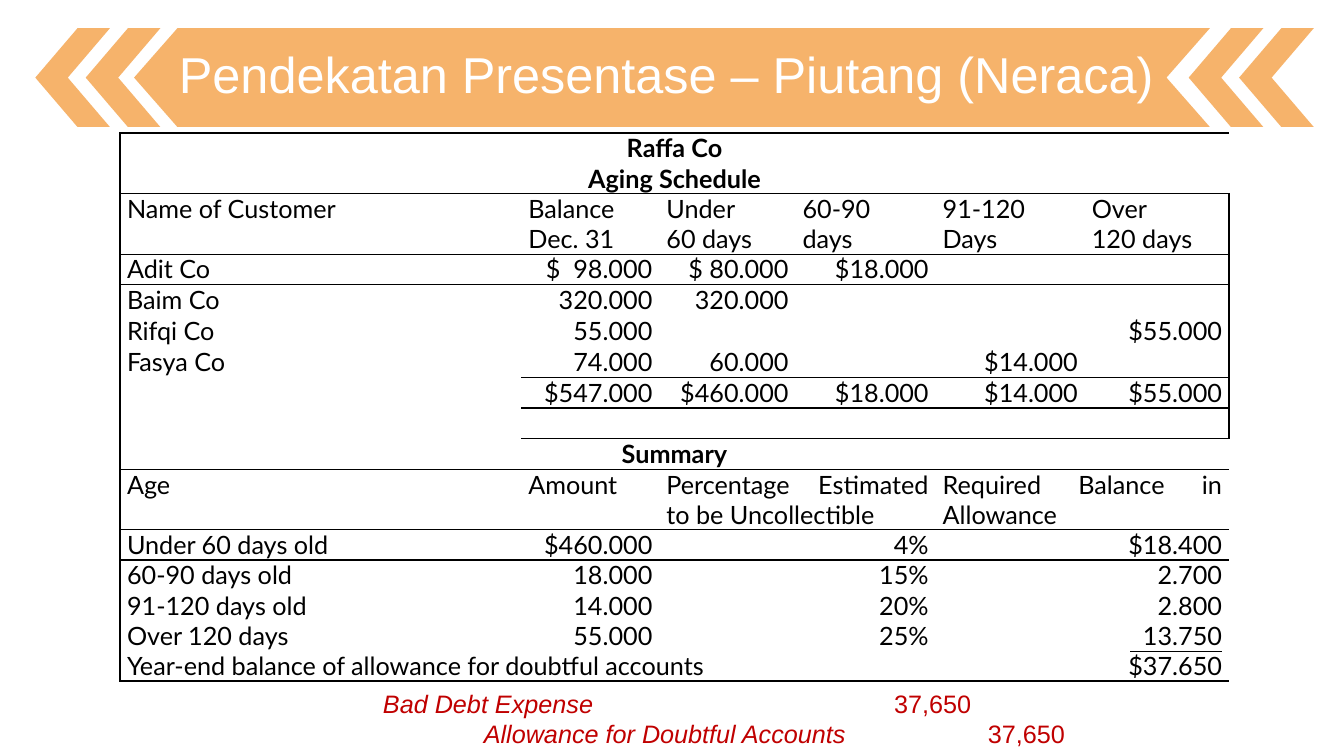
from lxml.etree import SubElement
from pptx import Presentation
from pptx.dml.color import RGBColor
from pptx.enum.shapes import MSO_SHAPE as Shape
from pptx.enum.text import MSO_ANCHOR as Anchor, MSO_AUTO_SIZE as AutoSize, PP_ALIGN as Align
from pptx.oxml.ns import qn
from pptx.util import Inches, Pt

ORANGE = RGBColor(0xF3, 0x93, 0x2D)
WHITE = RGBColor(0xFF, 0xFF, 0xFF)
BLACK = RGBColor(0, 0, 0)
RED = RGBColor(0xC0, 0, 0)

TITLE = "Pendekatan Presentase – Piutang (Neraca) "
SCHEDULE = [
    ("Raffa Co\nAging Schedule",),
    ("Name of Customer", "Balance\nDec. 31", "Under\n60 days", "60-90\ndays",
     "91-120\nDays", "Over\n120 days"),
    ("Adit Co", "$  98.000", "$ 80.000", "$18.000", "", ""),
    ("Baim Co", "320.000", "320.000", "", "", ""),
    ("Rifqi Co", "55.000", "", "", "", "$55.000"),
    ("Fasya Co", "74.000", "60.000", "", "$14.000", ""),
    ("", "$547.000", "$460.000", "$18.000", "$14.000", "$55.000"),
    ("", "", "", "", "", ""),
    ("Summary",),
    ("Age", "Amount", "Percentage Estimated to be Uncollectible",
     "Required Balance in Allowance"),
    ("Under 60 days old", "$460.000", "4%", "$18.400"),
    ("60-90 days old", "18.000", "15%", "2.700"),
    ("91-120 days old", "14.000", "20%", "2.800"),
    ("Over 120 days", "55.000", "25%", "  13.750"),
    ("Year-end balance of allowance for doubtful accounts", "$37.650"),
]
# Column spans, by the number of entries in a row
SPANS = {1: (6,), 2: (4, 2), 4: (1, 1, 2, 2), 6: (1,) * 6}
COLUMN_WIDTHS = (3.98, 1.37, 1.35, 1.39, 1.48, 1.43)
HEADER_ROWS = (1, 9)
TALL_ROWS = (0, 1, 9)
UNDERLINED = "  13.750"
# Row index -> first column of the rule drawn below that row
RULES_BELOW = {-1: 0, 0: 0, 1: 0, 5: 1, 6: 1, 8: 0, 9: 0, 14: 0}

# Entry lines as (runs of (text, italic), tab stops in inches)
JOURNAL = [
    ([("Bad Debt Expense", True), ("\t37,650", False)], (5.07,)),
    ([("\tAllowance for Doubtful Accounts", True), ("\t37,650", False)], (1, 6)),
]

BANNER_TOP, BANNER_HEIGHT = 0.28, 0.98
CHEVRON_LEFTS = (0.35, 0.85, 11.79, 12.29)
RIBBON = [(1.76, 0.28), (12, 0.28), (11.57, 0.77), (12, 1.26), (1.76, 1.26), (1.33, 0.77)]


def add_text(paragraph, text, font="Arial", size=18, color=BLACK,
             bold=False, italic=False, underline=False):
    run = paragraph.add_run()
    run.text = text
    style = run.font
    style.name, style.size, style.color.rgb = font, Pt(size), color
    style.bold, style.italic, style.underline = bold, italic, underline


def style_banner(shape):
    shape.shadow.inherit = False
    shape.line.fill.background()
    shape.fill.solid()
    shape.fill.fore_color.rgb = ORANGE
    color = shape._element.spPr.find(qn("a:solidFill"))[0]
    SubElement(color, qn("a:alpha"), val="70000")


def add_banner(shapes):
    for left in CHEVRON_LEFTS:
        chevron = shapes.add_shape(Shape.CHEVRON, Inches(left), Inches(BANNER_TOP),
                                   Inches(0.74), Inches(BANNER_HEIGHT))
        chevron.adjustments[0] = 0.565
        chevron.rotation = 180
        style_banner(chevron)
    start, *rest = [(Inches(x), Inches(y)) for x, y in RIBBON]
    outline = shapes.build_freeform(*start)
    outline.add_line_segments(rest, close=True)
    style_banner(outline.convert_to_shape())


def add_title(shapes):
    title = shapes.title
    title.left, title.top = Inches(0.35), Inches(0.37)
    title.width, title.height = Inches(12.66), Inches(0.79)
    frame = title.text_frame
    frame.auto_size, frame.vertical_anchor = AutoSize.NONE, Anchor.MIDDLE
    line = frame.paragraphs[0]
    line.alignment, line.line_spacing = Align.CENTER, 0.9
    add_text(line, TITLE, size=36, color=WHITE)
    shapes._spTree.append(title._element)  # in front of the banner


def draw_borders(cell, row, column):
    def ruled(above):
        return column >= RULES_BELOW.get(above, len(COLUMN_WIDTHS))

    edges = {"a:lnL": column == 0, "a:lnR": column == len(COLUMN_WIDTHS) - 1,
             "a:lnT": ruled(row - 1), "a:lnB": ruled(row)}
    properties = cell._tc.get_or_add_tcPr()
    for tag, visible in edges.items():
        if visible:
            line = SubElement(properties, qn(tag), w=str(Pt(1)))
            fill = SubElement(line, qn("a:solidFill"))
            SubElement(fill, qn("a:srgbClr"), val=str(BLACK))


def fill_cell(cell, text, row, column):
    if len(SCHEDULE[row]) == 1:
        alignment = Align.CENTER
    elif column == 0 or row in HEADER_ROWS:
        alignment = Align.JUSTIFY
    else:
        alignment = Align.RIGHT
    for index, line in enumerate(text.split("\n")):
        frame = cell.text_frame
        paragraph = frame.add_paragraph() if index else frame.paragraphs[0]
        paragraph.alignment = alignment
        if line:
            add_text(paragraph, line, font="Lato", bold=alignment == Align.CENTER,
                     underline=line == UNDERLINED)


def add_schedule(shapes):
    frame = shapes.add_table(len(SCHEDULE), len(COLUMN_WIDTHS), Inches(1.19), Inches(1.32),
                             Inches(sum(COLUMN_WIDTHS)), Inches(5.4))
    table = frame.table
    table.first_row = table.horz_banding = False
    # "No Style, No Grid"
    table._tbl.tblPr.find(qn("a:tableStyleId")).text = "{2D5ABB26-0587-4C30-8999-92F81FD0307C}"
    for column, width in enumerate(COLUMN_WIDTHS):
        table.columns[column].width = Inches(width)
    for row, texts in enumerate(SCHEDULE):
        table.rows[row].height = Inches(0.59 if row in TALL_ROWS else 0.3)
        for column in range(len(COLUMN_WIDTHS)):
            cell = table.cell(row, column)
            cell.margin_left = cell.margin_right = Inches(0.07)
            cell.margin_top = cell.margin_bottom = 0
            draw_borders(cell, row, column)
            cell.fill.background()
        column = 0
        for text, span in zip(texts, SPANS[len(texts)]):
            cell = table.cell(row, column)
            if span > 1:
                cell.merge(table.cell(row, column + span - 1))
            fill_cell(cell, text, row, column)
            column += span


def add_journal(shapes):
    frame = shapes.add_textbox(Inches(3.7), Inches(6.78), Inches(8.22), Inches(1.01)).text_frame
    frame.word_wrap = True
    for index, (runs, stops) in enumerate(JOURNAL):
        paragraph = frame.add_paragraph() if index else frame.paragraphs[0]
        tabs = SubElement(paragraph._p.get_or_add_pPr(), qn("a:tabLst"))
        for stop in stops:
            SubElement(tabs, qn("a:tab"), pos=str(Inches(stop)), algn="l")
        for text, italic in runs:
            add_text(paragraph, text, color=RED, italic=italic)


def main():
    deck = Presentation()
    deck.slide_width, deck.slide_height = Inches(13.33), Inches(7.5)
    shapes = deck.slides.add_slide(deck.slide_layouts[5]).shapes
    add_banner(shapes)
    add_title(shapes)
    add_schedule(shapes)
    add_journal(shapes)
    deck.save("out.pptx")


if __name__ == "__main__":
    main()
